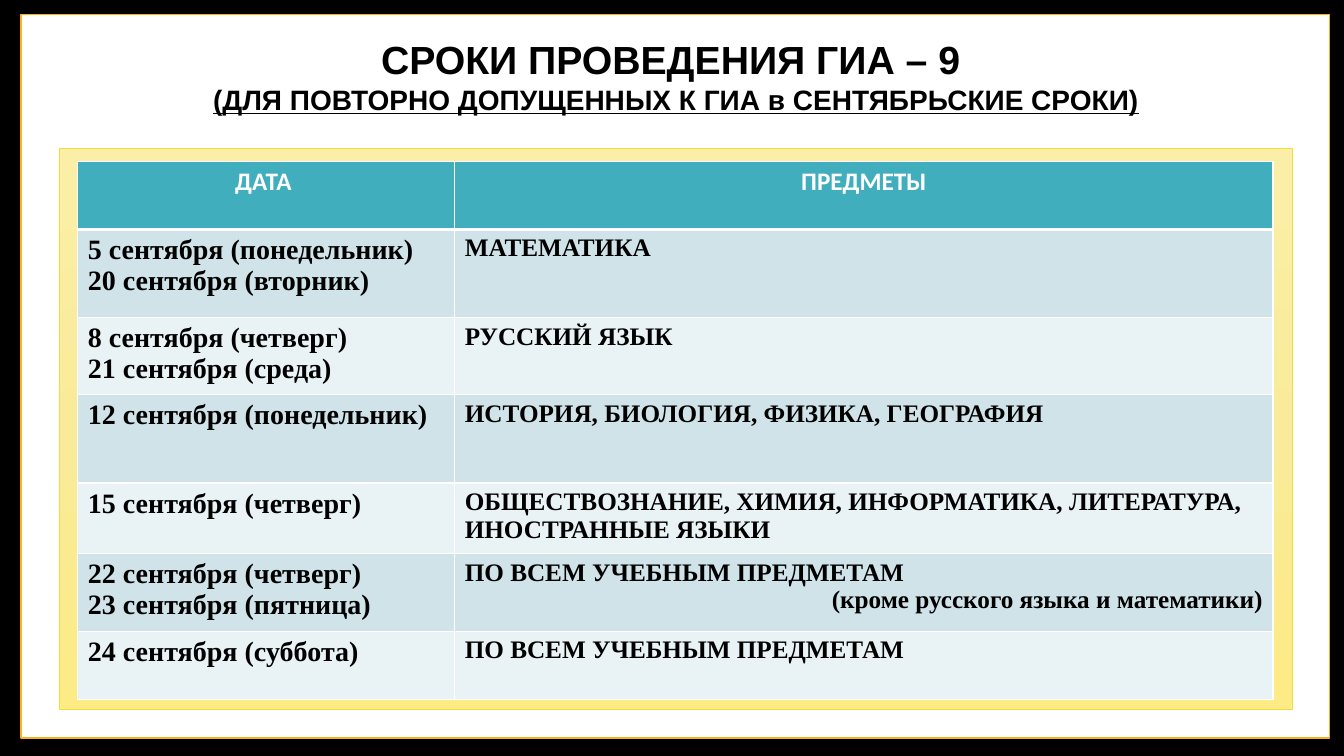
"""Build the slide with the September schedule of the GIA-9 exams."""
from copy import deepcopy
from dataclasses import dataclass

from lxml.etree import SubElement
from pptx import Presentation
from pptx.dml.color import RGBColor as Rgb
from pptx.enum.shapes import MSO_SHAPE as Preset
from pptx.enum.text import MSO_ANCHOR as Anchor, MSO_AUTO_SIZE as AutoSize, PP_ALIGN as Align
from pptx.oxml.ns import qn
from pptx.util import Cm, Pt


@dataclass(frozen=True)
class Theme:
    """Colours and type sizes of the slide."""
    black: str = "000000"
    white: str = "FFFFFF"
    sheet_edge: str = "FCB11C"
    panel_edge: str = "F4DE3A"
    panel_stops: tuple = ("FBEFA7", "F9EB99", "FDEB85")
    header: str = "41AEBD"
    bands: tuple = ("CFE3E8", "E9F2F4")
    title_size: int = 28
    large_size: int = 20
    text_size: int = 18


THEME = Theme()
TITLE = {"name": "Arial", "size": Pt(THEME.title_size), "bold": True}
SUBTITLE = {**TITLE, "size": Pt(THEME.large_size), "underline": True}
HEADING = {"name": "Calibri", "size": Pt(THEME.text_size), "bold": True}
DATE = {"name": "Times New Roman", "size": Pt(THEME.large_size), "bold": True}
SUBJECT = {**DATE, "size": Pt(THEME.text_size)}

HEADINGS = ("ДАТА ", "ПРЕДМЕТЫ")
SCHEDULE = (
    (("5 сентября (понедельник)", "20 сентября (вторник)"), ("МАТЕМАТИКА",)),
    (("8 сентября (четверг)", "21 сентября (среда)"), ("РУССКИЙ ЯЗЫК",)),
    (("12 сентября (понедельник)",), ("ИСТОРИЯ, БИОЛОГИЯ, ФИЗИКА, ГЕОГРАФИЯ",)),
    (("15 сентября (четверг)",),
     ("ОБЩЕСТВОЗНАНИЕ, ХИМИЯ, ИНФОРМАТИКА, ЛИТЕРАТУРА, ИНОСТРАННЫЕ ЯЗЫКИ",)),
    (("22 сентября (четверг)", "23 сентября (пятница)"),
     ("ПО ВСЕМ УЧЕБНЫМ ПРЕДМЕТАМ", "(кроме русского языка и математики)")),
    (("24 сентября (суббота)",), ("ПО ВСЕМ УЧЕБНЫМ ПРЕДМЕТАМ",)),
)
COLUMN_WIDTHS = (9.5, 20.62)
ROW_HEIGHTS = (1.72, 2.22, 1.94, 2.22, 1.76, 1.96, 1.72)


def set_attributes(target, values):
    """Set each named value on the target."""
    for attribute, value in values.items():
        setattr(target, attribute, value)


def write_lines(frame, lines, color):
    """Fill a text frame with (text, font format, alignment) paragraphs."""
    for index, (text, font_format, alignment) in enumerate(lines):
        paragraph = frame.add_paragraph() if index else frame.paragraphs[0]
        paragraph.alignment = alignment
        run = paragraph.add_run()
        run.text = text
        set_attributes(run.font, font_format)
        run.font.color.rgb = Rgb.from_string(color)


def add_panel(slide, box, edge, edge_width):
    """Add a rectangle with a coloured edge and no shadow."""
    panel = slide.shapes.add_shape(Preset.RECTANGLE, *map(Cm, box))
    panel.shadow.inherit = False
    panel.line.color.rgb = Rgb.from_string(edge)
    panel.line.width = Pt(edge_width)
    return panel


def fill_gradient(panel, colors):
    """Fill a panel from top to bottom with three evenly spaced colours."""
    panel.fill.gradient()
    panel.fill.gradient_angle = 270
    first = panel.fill._fill._gradFill.gsLst[0]
    first.addnext(deepcopy(first))
    for index, (stop, color) in enumerate(zip(panel.fill.gradient_stops, colors)):
        stop.position = index / (len(colors) - 1)
        stop.color.rgb = Rgb.from_string(color)


def add_title(slide):
    """Place and write the two-line title."""
    title = slide.shapes.title
    set_attributes(title, {"left": Cm(1.12), "top": Cm(0.76),
                           "width": Cm(31.83), "height": Cm(2.31)})
    set_attributes(title.text_frame, {"word_wrap": True, "vertical_anchor": Anchor.TOP,
                                      "auto_size": AutoSize.SHAPE_TO_FIT_TEXT})
    write_lines(title.text_frame, (
        ("СРОКИ ПРОВЕДЕНИЯ ГИА – 9 ", TITLE, Align.CENTER),
        ("(ДЛЯ ПОВТОРНО ДОПУЩЕННЫХ К ГИА в СЕНТЯБРЬСКИЕ СРОКИ)", SUBTITLE, Align.CENTER),
    ), THEME.black)
    return title


def add_borders(cell, top, bottom):
    """Draw white borders, with the given top and bottom widths."""
    properties = cell._tc.get_or_add_tcPr()
    for side, width in (("L", 1), ("R", 1), ("T", top), ("B", bottom)):
        border = SubElement(properties, qn(f"a:ln{side}"), w=str(Pt(width)))
        fill = SubElement(border, qn("a:solidFill"))
        SubElement(fill, qn("a:srgbClr"), val=THEME.white)


def format_cell(cell, lines, text_color, fill_color, top=1, bottom=1):
    """Write a cell and give it its borders and fill."""
    write_lines(cell.text_frame, lines, text_color)
    add_borders(cell, top, bottom)
    cell.fill.solid()
    cell.fill.fore_color.rgb = Rgb.from_string(fill_color)


def add_schedule(slide):
    """Add the table of dates and subjects."""
    table = slide.shapes.add_table(
        len(ROW_HEIGHTS), len(COLUMN_WIDTHS), Cm(1.96), Cm(4.06),
        Cm(sum(COLUMN_WIDTHS)), Cm(sum(ROW_HEIGHTS))).table
    for column, width in zip(table.columns, COLUMN_WIDTHS):
        column.width = Cm(width)
    for row, height in zip(table.rows, ROW_HEIGHTS):
        row.height = Cm(height)
    for column, heading in enumerate(HEADINGS):
        format_cell(table.cell(0, column), [(heading, HEADING, Align.CENTER)],
                    THEME.white, THEME.header, bottom=3)
    for row, (dates, subjects) in enumerate(SCHEDULE, 1):
        date_lines = [(date, DATE, Align.LEFT) for date in dates]
        subject_lines = [(subject, SUBJECT, alignment)
                         for subject, alignment in zip(subjects, (Align.LEFT, Align.RIGHT))]
        for column, lines in enumerate((date_lines, subject_lines)):
            format_cell(table.cell(row, column), lines, THEME.black,
                        THEME.bands[(row - 1) % 2], top=3 if row == 1 else 1)


def main():
    """Build and save the slide."""
    deck = Presentation()
    set_attributes(deck, {"slide_width": Cm(33.87), "slide_height": Cm(19.05)})
    slide = deck.slides.add_slide(deck.slide_layouts[5])
    slide.background.fill.solid()
    slide.background.fill.fore_color.rgb = Rgb.from_string(THEME.black)
    title = add_title(slide)
    sheet = add_panel(slide, (0.53, 0.36, 32.97, 18.24), THEME.sheet_edge, 1)
    sheet.fill.solid()
    sheet.fill.fore_color.rgb = Rgb.from_string(THEME.white)
    title.element.addprevious(sheet.element)
    panel = add_panel(slide, (1.5, 3.73, 31.06, 14.15), THEME.panel_edge, 0.5)
    fill_gradient(panel, THEME.panel_stops)
    add_schedule(slide)
    deck.save("out.pptx")


if __name__ == "__main__":
    main()
